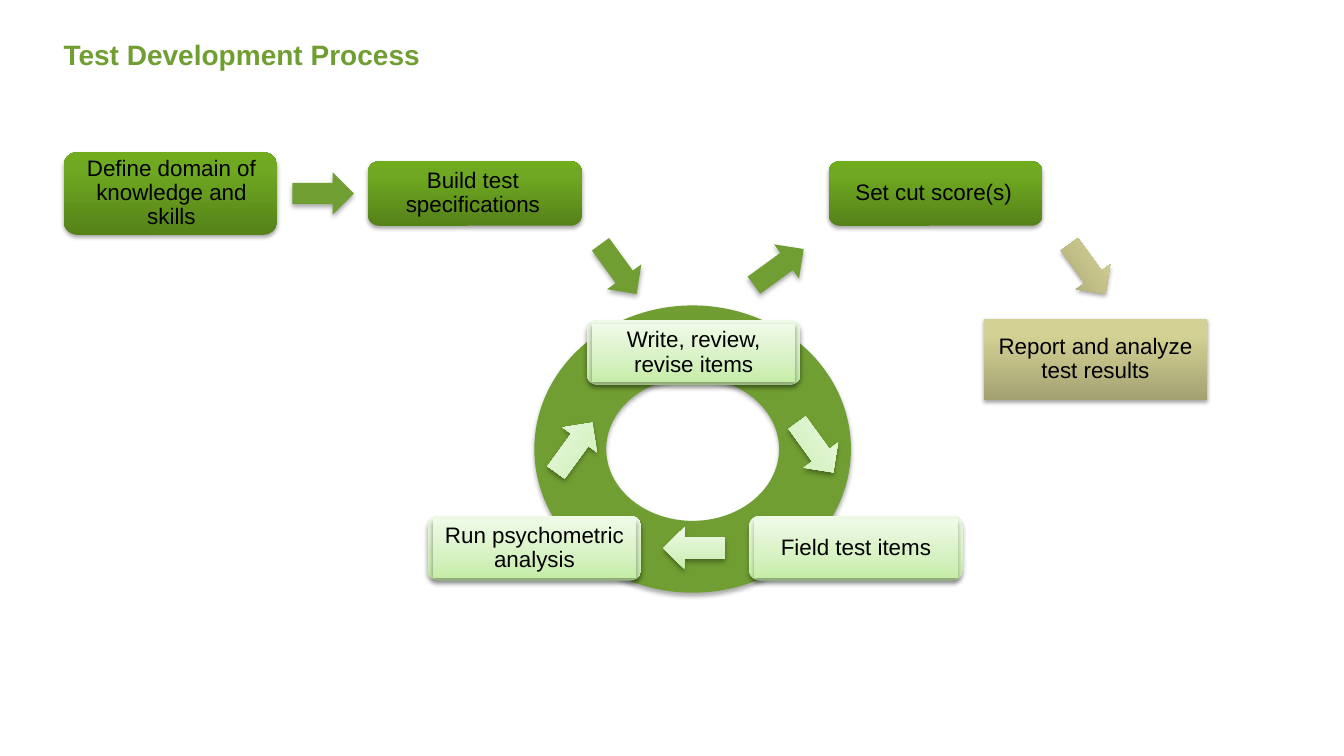
from dataclasses import dataclass, field

from lxml import etree
from pptx import Presentation
from pptx.dml.color import RGBColor
from pptx.enum.shapes import MSO_SHAPE
from pptx.enum.text import MSO_ANCHOR, PP_ALIGN
from pptx.oxml.ns import qn
from pptx.shapes.autoshape import Shape
from pptx.slide import Slide
from pptx.util import Inches, Pt

DONUT = MSO_SHAPE.DONUT
ROUNDED = MSO_SHAPE.ROUNDED_RECTANGLE
RECTANGLE = MSO_SHAPE.RECTANGLE
ARROW = MSO_SHAPE.RIGHT_ARROW
TOP, MIDDLE = MSO_ANCHOR.TOP, MSO_ANCHOR.MIDDLE
LEFT, CENTER = PP_ALIGN.LEFT, PP_ALIGN.CENTER

EMU_PER_POINT = 12700
TITLE_ONLY_LAYOUT = 5
PANEL_WIDTH, LABEL_WIDTH = 2.12, 2.02
ARROW_WIDTH, ARROW_HEIGHT = 0.61, 0.42

Gradient = tuple[tuple[int, str], ...]
Fill = str | Gradient


@dataclass(frozen=True)
class Shadow:
    opacity: int
    blur: float
    distance: float
    color: str = "000000"


@dataclass(frozen=True)
class Theme:
    font: str = "Arial"
    title_size: int = 20
    label_size: int = 16
    green: str = "709E32"
    text: str = "000000"
    dark_green: Gradient = ((0, "558219"), (80, "6FA921"), (100, "70AC1E"))
    light_green: Gradient = ((0, "C5EDA7"), (35, "D6F1C2"), (100, "EFFAE7"))
    khaki: Gradient = ((0, "A3A172"), (80, "D4D194"), (100, "D6D393"))
    soft: Shadow = field(default=Shadow(32, 3.5, 2.2))
    tight: Shadow = field(default=Shadow(35, 3.1, 1.8))
    title_shadow: Shadow = field(default=Shadow(40, 0, 1.5))


THEME = Theme()


@dataclass(frozen=True)
class Step:
    text: str
    left: float
    top: float
    height: float = 0.64
    inset_left: float = 0.03
    inset_top: float = 0.03
    in_cycle: bool = False


@dataclass(frozen=True)
class Arrow:
    left: float
    top: float
    rotation: int = 0
    fill: Fill = THEME.green
    shadow: Shadow = THEME.soft
    mirrored: bool = False


STEPS = (
    Step("Define domain of knowledge and skills", 0.63, 1.51, 0.82, 0.06, 0.04),
    Step("Build test specifications", 3.65, 1.6),
    Step("Write, review, revise items", 5.82, 3.18, inset_left=0.05, in_cycle=True),
    Step("Field test items", 7.43, 5.12, inset_left=0.05, in_cycle=True),
    Step("Run psychometric analysis", 4.24, 5.12, inset_left=0.05, in_cycle=True),
    Step("Set cut score(s)", 8.22, 1.6),
)

ARROWS = (
    Arrow(2.9, 1.71),
    Arrow(5.83, 2.46, 54),
    Arrow(7.42, 2.44, 324),
    Arrow(7.78, 4.23, 54, THEME.light_green),
    Arrow(5.39, 4.23, 306, THEME.light_green),
    Arrow(6.58, 5.23, 0, THEME.light_green, mirrored=True),
    Arrow(10.48, 2.46, 54, THEME.khaki, THEME.tight),
)


def shadow_effect(shadow: Shadow) -> etree._Element:
    """Build an effect list holding one shadow that falls straight down."""
    effects = etree.Element(qn("a:effectLst"))
    outer = etree.SubElement(
        effects, qn("a:outerShdw"),
        blurRad=str(round(shadow.blur * EMU_PER_POINT)),
        dist=str(round(shadow.distance * EMU_PER_POINT)),
        dir="5400000", rotWithShape="0",
    )
    color = etree.SubElement(outer, qn("a:srgbClr"), val=shadow.color)
    etree.SubElement(color, qn("a:alpha"), val=str(shadow.opacity * 1000))
    return effects


def paint(shape: Shape, fill: Fill, shadow: Shadow) -> None:
    properties = shape._element.spPr
    if isinstance(fill, str):
        shape.fill.solid()
        shape.fill.fore_color.rgb = RGBColor.from_string(fill)
    else:
        shape.fill.gradient()
        shape.fill.gradient_angle = 90
        stops = properties.find(qn("a:gradFill")).find(qn("a:gsLst"))
        for stop in list(stops):
            stops.remove(stop)
        for position, color in fill:
            stop = etree.SubElement(stops, qn("a:gs"), pos=str(position * 1000))
            etree.SubElement(stop, qn("a:srgbClr"), val=color)
    shape.line.fill.background()
    properties.append(shadow_effect(shadow))


def add_painted(slide: Slide, kind: MSO_SHAPE, left: float, top: float, width: float,
                height: float, fill: Fill, shadow: Shadow) -> Shape:
    shape = slide.shapes.add_shape(
        kind, Inches(left), Inches(top), Inches(width), Inches(height))
    paint(shape, fill, shadow)
    return shape


def write_label(shape: Shape, text: str) -> None:
    frame = shape.text_frame
    frame.word_wrap = True
    frame.vertical_anchor = MIDDLE
    frame.margin_left = frame.margin_right = Inches(0.07)
    frame.margin_top = frame.margin_bottom = Inches(0.07)
    paragraph = frame.paragraphs[0]
    paragraph.alignment = CENTER
    paragraph.line_spacing = 0.9
    run = paragraph.add_run()
    run.text = text
    run.font.name = THEME.font
    run.font.size = Pt(THEME.label_size)
    run.font.color.rgb = RGBColor.from_string(THEME.text)


def add_title(slide: Slide, text: str) -> None:
    title = slide.shapes.title
    title.left, title.top = Inches(0.53), Inches(0.29)
    title.width, title.height = Inches(8.89), Inches(0.87)
    frame = title.text_frame
    frame.vertical_anchor = TOP
    frame.margin_top = Inches(0.08)
    paragraph = frame.paragraphs[0]
    paragraph.alignment = LEFT
    run = paragraph.add_run()
    run.text = text
    run.font.name = THEME.font
    run.font.size = Pt(THEME.title_size)
    run.font.bold = True
    run.font.color.rgb = RGBColor.from_string(THEME.green)
    color_fill = run._r.rPr.find(qn("a:solidFill"))
    color_fill.addnext(shadow_effect(THEME.title_shadow))


def add_step(slide: Slide, step: Step) -> None:
    fill = THEME.light_green if step.in_cycle else THEME.dark_green
    shadow = THEME.soft if step.in_cycle else THEME.tight
    add_painted(slide, ROUNDED, step.left, step.top, PANEL_WIDTH, step.height, fill, shadow)
    area = (step.left + step.inset_left, step.top + step.inset_top,
            LABEL_WIDTH, step.height - 2 * step.inset_top)
    if step.in_cycle:
        label = add_painted(slide, RECTANGLE, *area, fill, shadow)
    else:
        label = slide.shapes.add_textbox(*map(Inches, area))
    write_label(label, step.text)


def add_arrow(slide: Slide, arrow: Arrow) -> None:
    shape = add_painted(slide, ARROW, arrow.left, arrow.top, ARROW_WIDTH, ARROW_HEIGHT,
                        arrow.fill, arrow.shadow)
    shape.rotation = arrow.rotation
    if arrow.mirrored:
        shape._element.spPr.xfrm.set("flipH", "1")


def main() -> None:
    presentation = Presentation()
    presentation.slide_width, presentation.slide_height = Inches(13.33), Inches(7.5)
    slide = presentation.slides.add_slide(presentation.slide_layouts[TITLE_ONLY_LAYOUT])
    add_title(slide, "Test Development Process")

    # Cycle ring behind the item steps
    add_painted(slide, DONUT, 5.3, 3.03, 3.14, 2.85, THEME.green, THEME.soft)

    # Process steps and the final report
    for step in STEPS:
        add_step(slide, step)
    report = add_painted(slide, RECTANGLE, 9.76, 3.16, 2.21, 0.81, THEME.khaki, THEME.tight)
    write_label(report, "Report and analyze test results")

    # Arrows between the steps
    for arrow in ARROWS:
        add_arrow(slide, arrow)
    presentation.save("out.pptx")


if __name__ == "__main__":
    main()
